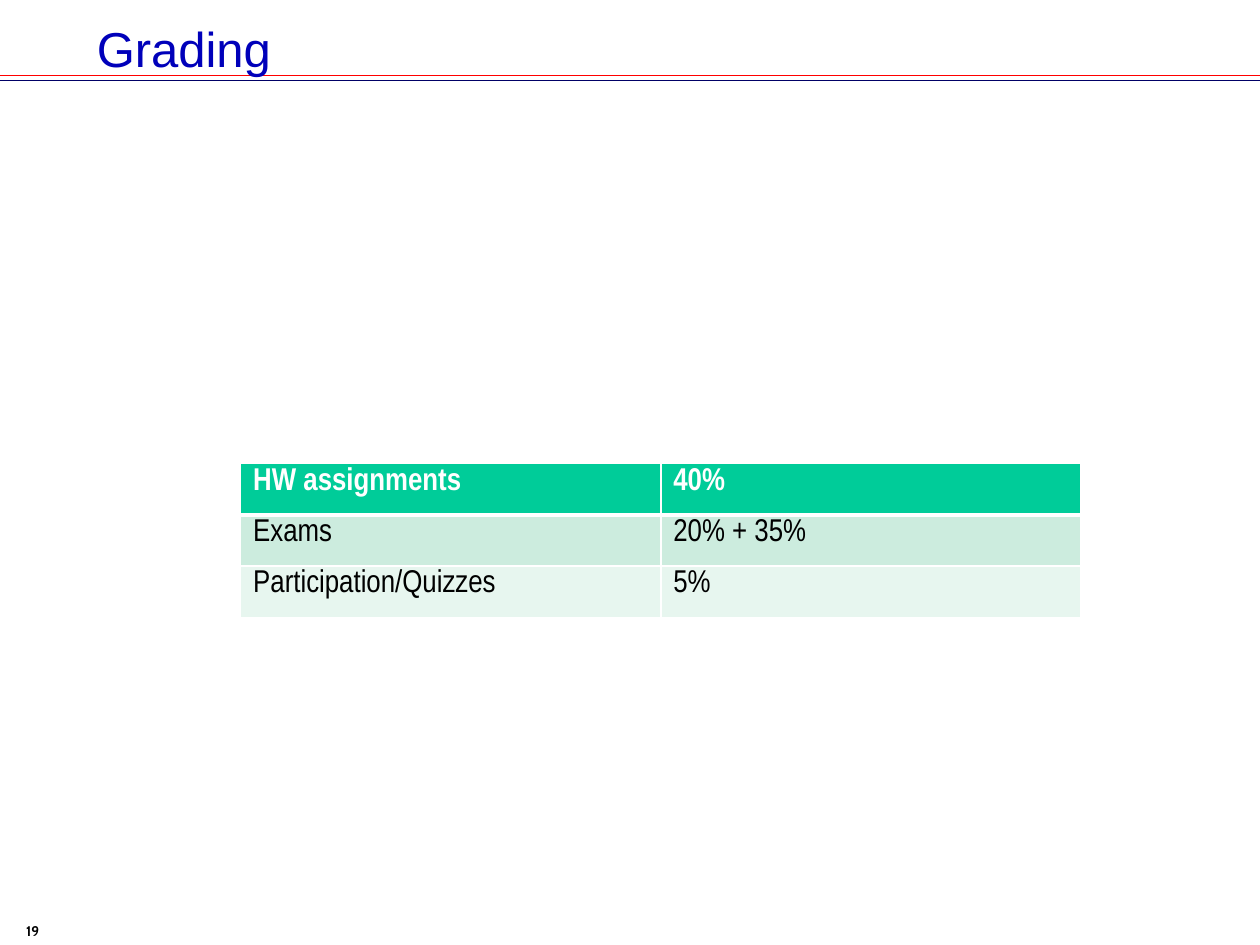
from lxml import etree
from pptx import Presentation
from pptx.dml.color import RGBColor
from pptx.enum.shapes import MSO_CONNECTOR
from pptx.enum.text import MSO_ANCHOR, PP_ALIGN
from pptx.oxml.ns import qn
from pptx.util import Inches, Pt

STRAIGHT = MSO_CONNECTOR.STRAIGHT
TOP, MIDDLE = MSO_ANCHOR.TOP, MSO_ANCHOR.MIDDLE
LEFT, RIGHT = PP_ALIGN.LEFT, PP_ALIGN.RIGHT

SLIDE_W, SLIDE_H = 10, 7.5
TITLE = "Grading"
PAGE_NUMBER = "19"
GRADES = [
    ("HW assignments", "40%"),
    ("Exams", "20% + 35%"),
    ("Participation/Quizzes", "5%"),
]
ROW_FILLS = ["00CC99", "CCECDE", "E7F6EF"]
HEADER_RULES = [(0.6, "FF0000"), (0.64, "000066")]
TABLE_BOX = (1.91, 3.68, 6.67, 1.22)
BORDER = "FFFFFF"


def color(hex_code):
    return RGBColor.from_string(hex_code)


def write(frame, text, size, font, ink, bold=False, align=LEFT, spacing=1.0):
    paragraph = frame.paragraphs[0]
    paragraph.alignment = align
    paragraph.line_spacing = spacing
    run = paragraph.add_run()
    run.text = text
    run.font.size = Pt(size)
    run.font.name = font
    run.font.bold = bold
    run.font.color.rgb = color(ink)


def add_text(slide, box, text, anchor=TOP, **style):
    frame = slide.shapes.add_textbox(*map(Inches, box)).text_frame
    frame.word_wrap = True
    frame.vertical_anchor = anchor
    write(frame, text, **style)


def add_rule(slide, y, ink):
    rule = slide.shapes.add_connector(
        STRAIGHT, 0, Inches(y), Inches(SLIDE_W), Inches(y))
    rule.line.color.rgb = color(ink)
    rule.line.width = Pt(1)
    etree.SubElement(rule._element.spPr, qn("a:effectLst"))


def set_borders(cell, widths):
    """Draw borders; widths maps each side (L, R, T, B) to points."""
    properties = cell._tc.get_or_add_tcPr()
    for side, width in widths.items():
        line = etree.SubElement(properties, qn(f"a:ln{side}"), w=str(Pt(width)))
        fill = etree.SubElement(line, qn("a:solidFill"))
        etree.SubElement(fill, qn("a:srgbClr"), val=BORDER)


def add_grades(slide):
    table = slide.shapes.add_table(
        len(GRADES), len(GRADES[0]), *map(Inches, TABLE_BOX)).table
    for r, (row, row_fill) in enumerate(zip(GRADES, ROW_FILLS)):
        header = r == 0
        widths = {"L": 1, "R": 1, "T": 3 if r == 1 else 1, "B": 3 if header else 1}
        for c, text in enumerate(row):
            cell = table.cell(r, c)
            set_borders(cell, widths)
            cell.fill.solid()
            cell.fill.fore_color.rgb = color(row_fill)
            write(cell.text_frame, text, size=18, font="Arial Narrow",
                  ink="FFFFFF" if header else "000000", bold=header, spacing=0.85)


def main():
    deck = Presentation()
    deck.slide_width, deck.slide_height = Inches(SLIDE_W), Inches(SLIDE_H)
    slide = deck.slides.add_slide(deck.slide_layouts[6])
    for y, ink in HEADER_RULES:
        add_rule(slide, y, ink)
    add_text(slide, (0, 7.27, 0.41, 0.23), PAGE_NUMBER, anchor=MIDDLE,
             size=8, font="Cabin", ink="000000", bold=True, align=RIGHT)
    add_text(slide, (0.67, 0.1, 8.65, 1), TITLE, size=28, font="Arial", ink="0000BA")
    add_grades(slide)
    deck.save("out.pptx")


if __name__ == "__main__":
    main()
